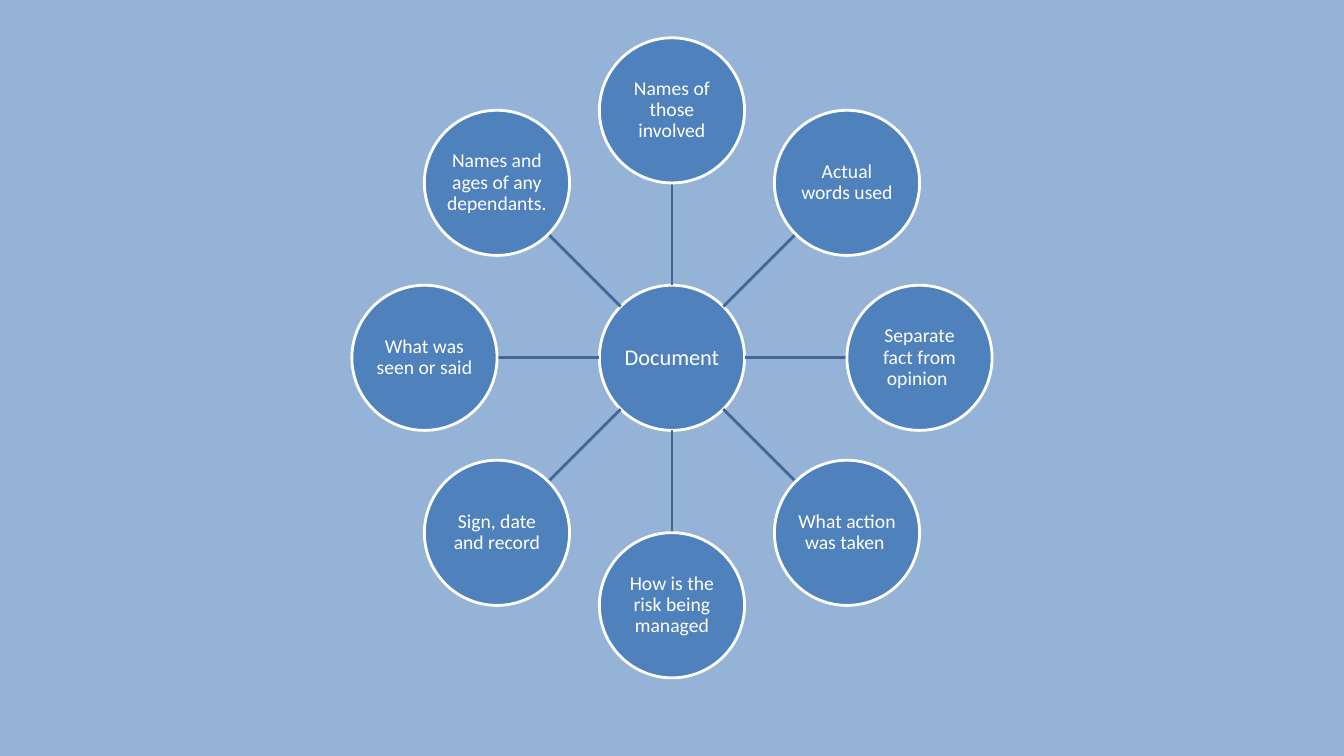
from dataclasses import dataclass
from math import cos, radians, sin

from lxml import etree
from pptx import Presentation
from pptx.dml.color import RGBColor
from pptx.enum.shapes import MSO_CONNECTOR, MSO_SHAPE
from pptx.enum.text import MSO_ANCHOR, PP_ALIGN
from pptx.oxml.ns import qn
from pptx.util import Inches, Pt

OVAL = MSO_SHAPE.OVAL
STRAIGHT = MSO_CONNECTOR.STRAIGHT
MIDDLE = MSO_ANCHOR.MIDDLE
CENTER = PP_ALIGN.CENTER


@dataclass(frozen=True)
class Theme:
    background: RGBColor = RGBColor.from_string("95B3D7")
    circle: RGBColor = RGBColor.from_string("4F81BD")
    spoke: RGBColor = RGBColor.from_string("3F6797")
    white: RGBColor = RGBColor.from_string("FFFFFF")
    font: str = "Calibri"
    hub_size: Pt = Pt(16)
    topic_size: Pt = Pt(14)
    line_width: Pt = Pt(2)


theme = Theme()

deck = Presentation()
deck.slide_width = Inches(13.33)
deck.slide_height = Inches(7.5)
page = deck.slides.add_slide(deck.slide_layouts[6])
page.background.fill.solid()
page.background.fill.fore_color.rgb = theme.background

hub_x = deck.slide_width / 2
hub_y = Inches(3.55)
circle_radius = Inches(0.72)
ring_radius = Inches(2.455)

# Clockwise from the top
topics = [
    "Names of those involved",
    "Actual words used",
    "Separate fact from opinion ",
    "What action was taken ",
    "How is the risk being managed",
    "Sign, date and record",
    "What was seen or said",
    "Names and ages of any dependants. ",
]


def point_at(angle, distance):
    """Return the point at a clockwise angle from the top of the hub."""
    return round(hub_x + distance * sin(angle)), round(hub_y - distance * cos(angle))


def add_circle(center, words, size):
    left, top = (value - circle_radius for value in center)
    circle = page.shapes.add_shape(OVAL, left, top, 2 * circle_radius, 2 * circle_radius)
    circle.shadow.inherit = False
    circle.fill.solid()
    circle.fill.fore_color.rgb = theme.circle
    circle.line.color.rgb = theme.white
    circle.line.width = theme.line_width
    frame = circle.text_frame
    frame.word_wrap = True
    frame.vertical_anchor = MIDDLE
    frame.margin_left = frame.margin_right = Inches(0.01)
    frame.margin_top = frame.margin_bottom = Inches(0.01)
    para = frame.paragraphs[0]
    para.alignment = CENTER
    para.line_spacing = 0.9
    span = para.add_run()
    span.text = words
    span.font.name = theme.font
    span.font.size = size
    span.font.color.rgb = theme.white


add_circle(point_at(0, 0), "Document", theme.hub_size)

for index, topic in enumerate(topics):
    angle = radians(index * 360 / len(topics))
    start = point_at(angle, circle_radius)
    end = point_at(angle, ring_radius - circle_radius)
    spoke = page.shapes.add_connector(STRAIGHT, *start, *end)
    spoke.line.color.rgb = theme.spoke
    spoke.line.width = theme.line_width
    etree.SubElement(spoke._element.spPr, qn("a:effectLst"))
    add_circle(point_at(angle, ring_radius), topic, theme.topic_size)

deck.save("out.pptx")
